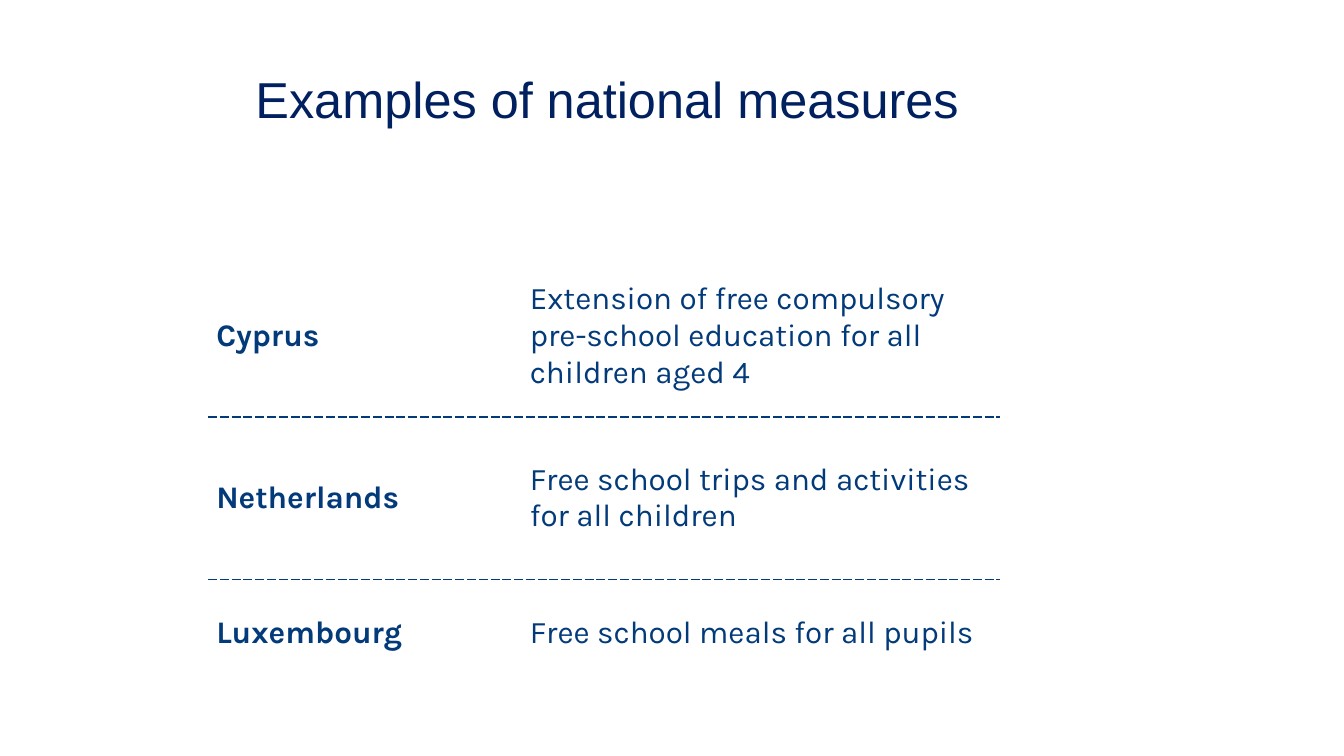
from lxml import etree
from pptx import Presentation
from pptx.dml.color import RGBColor
from pptx.enum.text import MSO_ANCHOR, PP_ALIGN
from pptx.oxml.ns import qn
from pptx.util import Pt

CENTER = PP_ALIGN.CENTER
MIDDLE = MSO_ANCHOR.MIDDLE
COLORS = {"title": "002060", "table": "023A7A"}
COLUMN_WIDTHS = [279.9, 426.7]
ROW_HEIGHTS = [144.7, 144.7, 95.8]
MEASURES = [
    ("Cyprus", "Extension of free compulsory pre-school education for all children aged 4"),
    ("Netherlands", "Free school trips and activities for all children"),
    ("Luxembourg", "Free school meals for all pupils"),
]


def style_font(para, name, size, color, bold=False):
    para.font.name = name
    para.font.size = Pt(size)
    para.font.bold = bold
    para.font.color.rgb = RGBColor.from_string(COLORS[color])


def add_title(page, text):
    box = page.shapes.add_textbox(Pt(95.8), Pt(63.4), Pt(892.1), Pt(77))
    box.text_frame.word_wrap = True
    para = box.text_frame.paragraphs[0]
    para.text = text
    para.alignment = CENTER
    para.line_spacing = 0.9
    style_font(para, "Arial", 45, "title")


def add_border(cell, side, visible):
    properties = cell._tc.get_or_add_tcPr()
    line = etree.SubElement(properties, qn(f"a:ln{side}"), w=str(Pt(1.5)))
    if not visible:
        etree.SubElement(line, qn("a:noFill"))
        return
    fill = etree.SubElement(line, qn("a:solidFill"))
    etree.SubElement(fill, qn("a:srgbClr"), val=COLORS["table"])
    etree.SubElement(line, qn("a:prstDash"), val="sysDash")


def fill_cell(cell, text, bold, line_above, line_below):
    cell.text = text
    cell.vertical_anchor = MIDDLE
    style_font(cell.text_frame.paragraphs[0], "Karla", 28, "table", bold)
    for side, visible in zip("LRTB", (False, False, line_above, line_below)):
        add_border(cell, side, visible)
    cell.fill.background()


def add_measures(page, measures):
    frame = page.shapes.add_table(
        len(measures), len(COLUMN_WIDTHS), Pt(185.8), Pt(227.5),
        Pt(sum(COLUMN_WIDTHS)), Pt(sum(ROW_HEIGHTS)))
    table = frame.table
    table.first_row = False
    table.horz_banding = False
    for column, width in zip(table.columns, COLUMN_WIDTHS):
        column.width = Pt(width)
    for row, height in zip(table.rows, ROW_HEIGHTS):
        row.height = Pt(height)
    last = len(measures) - 1
    for row_index, texts in enumerate(measures):
        for column_index, text in enumerate(texts):
            fill_cell(table.cell(row_index, column_index), text,
                      column_index == 0, row_index > 0, row_index < last)


def main():
    deck = Presentation()
    deck.slide_width = Pt(1199.5)
    deck.slide_height = Pt(674.6)
    page = deck.slides.add_slide(deck.slide_layouts[6])
    add_title(page, "Examples of national measures")
    add_measures(page, MEASURES)
    deck.save("out.pptx")


if __name__ == "__main__":
    main()
